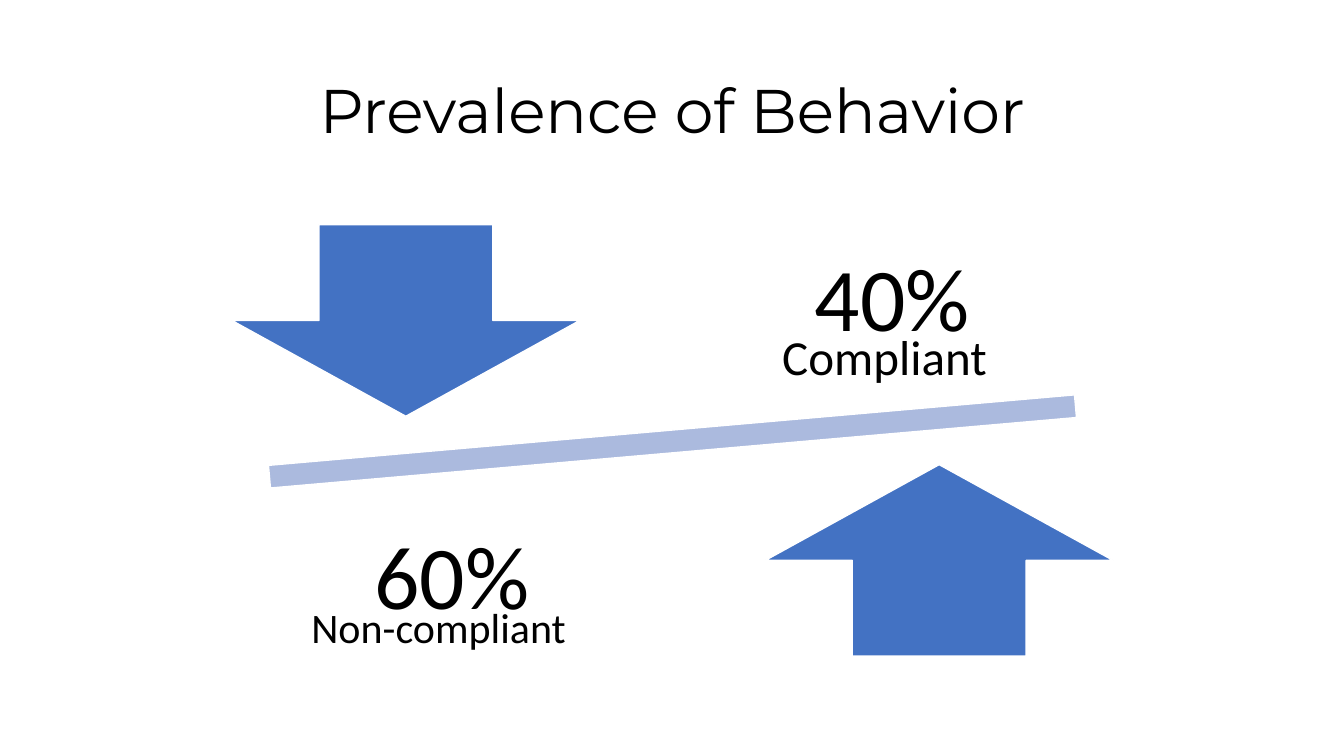
from pptx import Presentation
from pptx.dml.color import RGBColor
from pptx.enum.shapes import MSO_SHAPE
from pptx.enum.text import MSO_ANCHOR, PP_ALIGN
from pptx.util import Inches, Pt

BLUE, PALE_BLUE, WHITE, BLACK = "4372C3", "ABBADE", "FFFFFF", "000000"
ARROW_SIZE = (3.45, 1.9)
PERCENT_SIZE = (3.68, 2)


def color(hex_string):
    return RGBColor.from_string(hex_string)


def add_figure(slide, preset, box, fill, adjustments, rotation=0):
    figure = slide.shapes.add_shape(preset, *map(Inches, box))
    figure.shadow.inherit = False
    figure.fill.solid()
    figure.fill.fore_color.rgb = color(fill)
    figure.line.color.rgb = color(WHITE)
    figure.line.width = Pt(1)
    figure.rotation = rotation
    for index, value in enumerate(adjustments):
        figure.adjustments[index] = value


def add_text(slide, text, box, size, font="Calibri", inset=None):
    """Add one line of text; return its frame and paragraph."""
    frame = slide.shapes.add_textbox(*map(Inches, box)).text_frame
    frame.word_wrap = True
    if inset is not None:
        frame.margin_left = frame.margin_right = Inches(inset)
        frame.margin_top = frame.margin_bottom = Inches(inset)
    paragraph = frame.paragraphs[0]
    run = paragraph.add_run()
    run.text = text
    run.font.name = font
    run.font.size = Pt(size)
    run.font.color.rgb = color(BLACK)
    return frame, paragraph


def add_centered_text(slide, *args, **options):
    frame, paragraph = add_text(slide, *args, **options)
    frame.vertical_anchor = MSO_ANCHOR.MIDDLE
    paragraph.alignment = PP_ALIGN.CENTER
    paragraph.line_spacing = 0.9


def main():
    deck = Presentation()
    deck.slide_width, deck.slide_height = Inches(13.33), Inches(7.5)
    slide = deck.slides.add_slide(deck.slide_layouts[6])

    add_centered_text(slide, "Prevalence of Behavior", (0.92, 0.4, 11.5, 1.45),
                      44, font="Montserrat")
    add_figure(slide, MSO_SHAPE.MATH_MINUS, (1.21, 3.9, 10.92, 0.96),
               PALE_BLUE, [0.235], rotation=355)

    for preset, left, top in ((MSO_SHAPE.DOWN_ARROW, 2.3, 2.23),
                              (MSO_SHAPE.UP_ARROW, 7.59, 4.61)):
        add_figure(slide, preset, (left, top, *ARROW_SIZE), BLUE, [0.5, 0.5])

    for percent, left, top in (("40%", 7.01, 2), ("60%", 2.64, 4.76)):
        add_centered_text(slide, percent, (left, top, *PERCENT_SIZE), 64, inset=0.5)

    add_text(slide, "Compliant", (7.66, 3.19, 2.82, 0.69), 35)
    add_text(slide, "Non-compliant", (2.99, 5.92, 3.15, 0.61), 30)

    deck.save("out.pptx")


if __name__ == "__main__":
    main()
